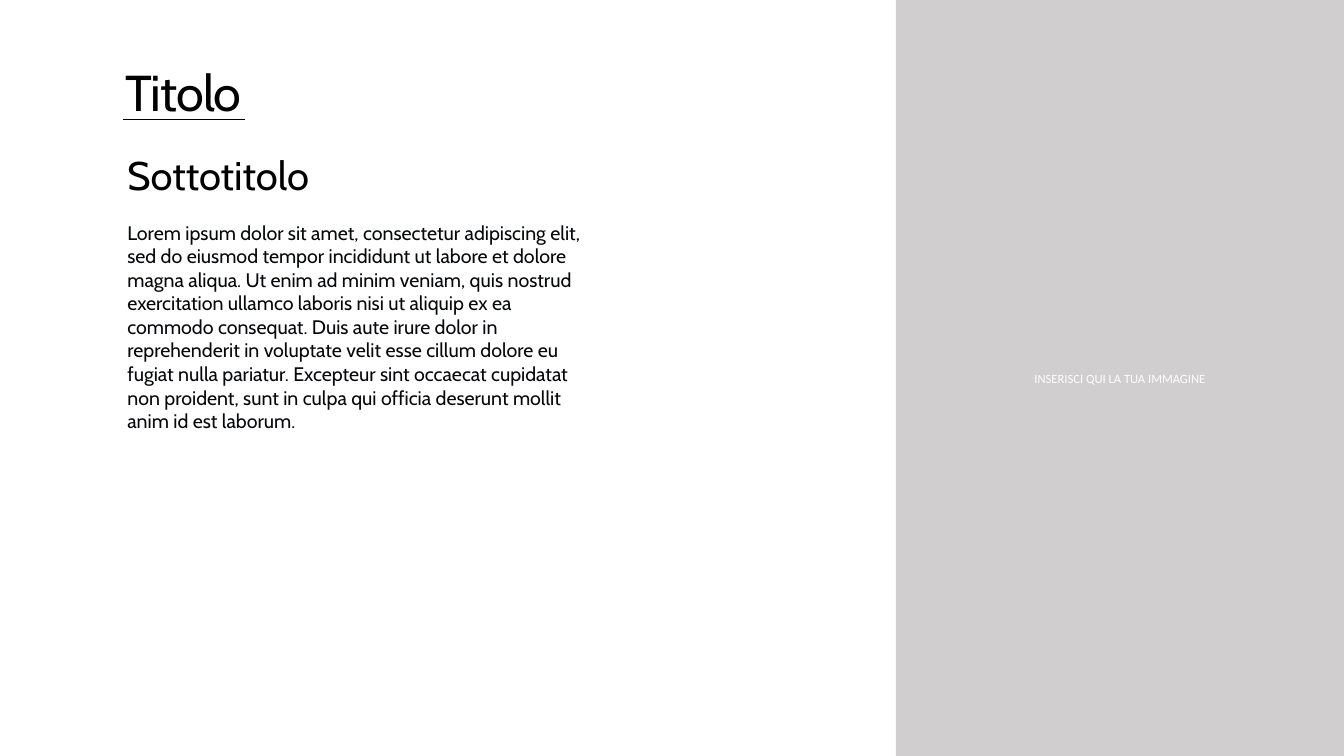
from pptx import Presentation
from pptx.dml.color import RGBColor
from pptx.enum.shapes import MSO_CONNECTOR as Connector, MSO_SHAPE as Shape
from pptx.enum.text import MSO_ANCHOR as Anchor, MSO_AUTO_SIZE as Fit, PP_ALIGN as Align
from pptx.oxml.ns import qn
from pptx.util import Cm, Pt
from lxml import etree

BODY = (
    "Lorem ipsum dolor sit amet, consectetur adipiscing elit, sed do eiusmod "
    "tempor incididunt ut labore et dolore magna aliqua. Ut enim ad minim veniam, "
    "quis nostrud exercitation ullamco laboris nisi ut aliquip ex ea commodo "
    "consequat. Duis aute irure dolor in reprehenderit in voluptate velit esse "
    "cillum dolore eu fugiat nulla pariatur. Excepteur sint occaecat cupidatat "
    "non proident, sunt in culpa qui officia deserunt mollit anim id est laborum."
)


def color(value):
    return RGBColor.from_string(value)


def write(box, text, size, font="Cabin", fill="000000", align=Align.LEFT,
          anchor=Anchor.TOP, fit=Fit.NONE, line_spacing=None, tracking=None, inset=None):
    frame = box.text_frame
    frame.word_wrap = True
    frame.auto_size = fit
    frame.vertical_anchor = anchor
    if inset is not None:
        frame.margin_left = frame.margin_right = Cm(inset)
        frame.margin_top = frame.margin_bottom = Cm(inset)
    para = frame.paragraphs[0]
    para.alignment = align
    para.space_before = Pt(0)
    if line_spacing:
        para.line_spacing = line_spacing
    span = para.add_run()
    span.text = text
    span.font.name = font
    span.font.size = Pt(size)
    span.font.color.rgb = color(fill)
    if tracking:
        span.font._element.set("spc", str(round(tracking * 100)))


class Page:
    left = 6.17
    black = "000000"
    ink = "07080B"
    grey = "D0CECE"
    white = "FFFFFF"

    def __init__(self, deck):
        self.slide = deck.slides.add_slide(deck.slide_layouts[5])

    def title(self, text, top, width, height):
        box = self.slide.shapes.title
        box.left, box.top = Cm(self.left), Cm(top)
        box.width, box.height = Cm(width), Cm(height)
        write(box, text, 72, line_spacing=0.8, tracking=-1.4, inset=0.15)

    def text(self, text, top, width, height, size, fill):
        box = self.slide.shapes.add_textbox(Cm(self.left), Cm(top), Cm(width), Cm(height))
        write(box, text, size, fill=fill, fit=Fit.SHAPE_TO_FIT_TEXT)

    def panel(self, text, left, width, height):
        box = self.slide.shapes.add_shape(
            Shape.RECTANGLE, Cm(left), Cm(0), Cm(width), Cm(height))
        box.shadow.inherit = False
        box.fill.solid()
        box.fill.fore_color.rgb = color(self.grey)
        box.line.fill.background()
        write(box, text, 18, font="Calibri", fill=self.white,
              align=Align.CENTER, anchor=Anchor.MIDDLE)

    def rule(self, left, right, top):
        line = self.slide.shapes.add_connector(
            Connector.STRAIGHT, Cm(left), Cm(top), Cm(right), Cm(top))
        line.line.color.rgb = color(self.black)
        line.line.width = Pt(2)
        etree.SubElement(line._element.spPr, qn("a:effectLst"))


def main():
    width, height = 67.74, 38.1
    deck = Presentation()
    deck.slide_width, deck.slide_height = Cm(width), Cm(height)
    page = Page(deck)
    page.panel("INSERISCI QUI LA TUA IMMAGINE", width * 2 / 3, width / 3, height)
    page.rule(6.22, 12.34, 6.02)
    page.title("Titolo", 3.53, 19.3, 3.18)
    page.text("Sottotitolo", 7.49, 26.82, 2.69, 57, page.black)
    page.text(BODY, 11, 23.39, 11.02, 28, page.ink)
    deck.save("out.pptx")


if __name__ == "__main__":
    main()
